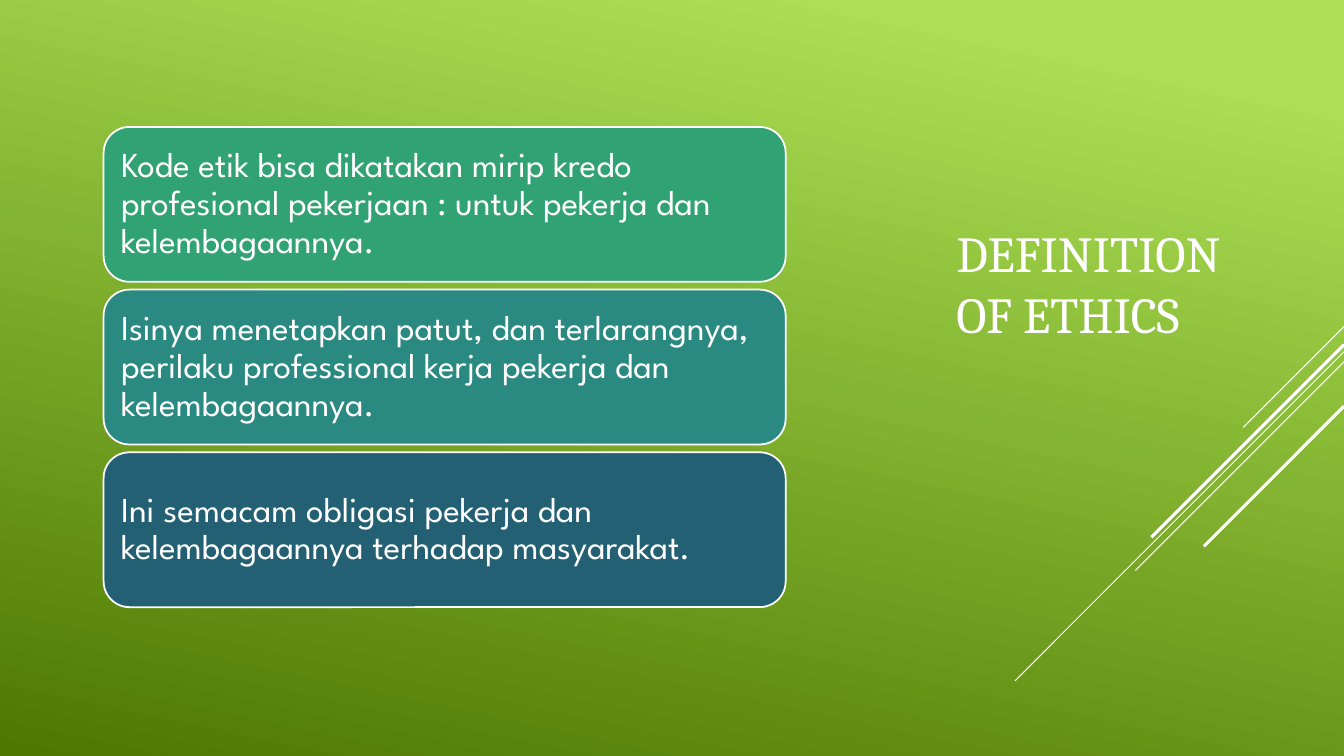
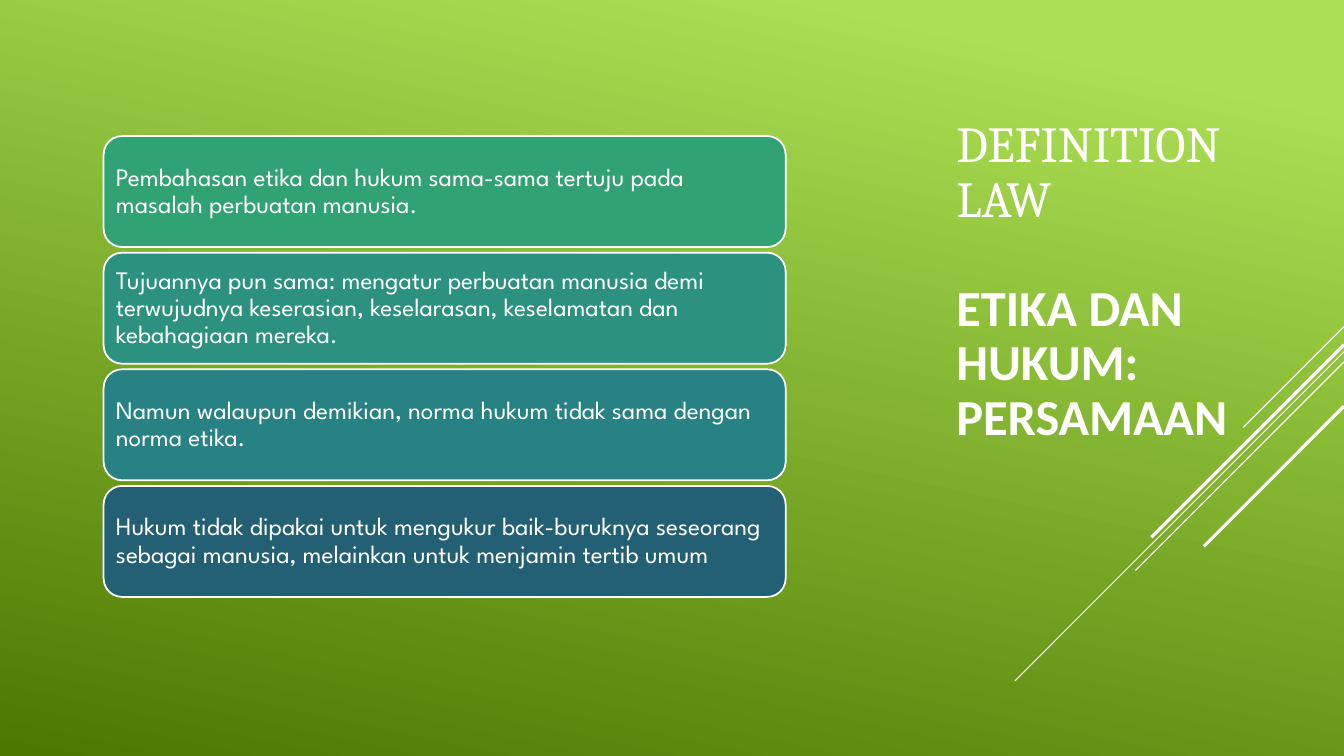
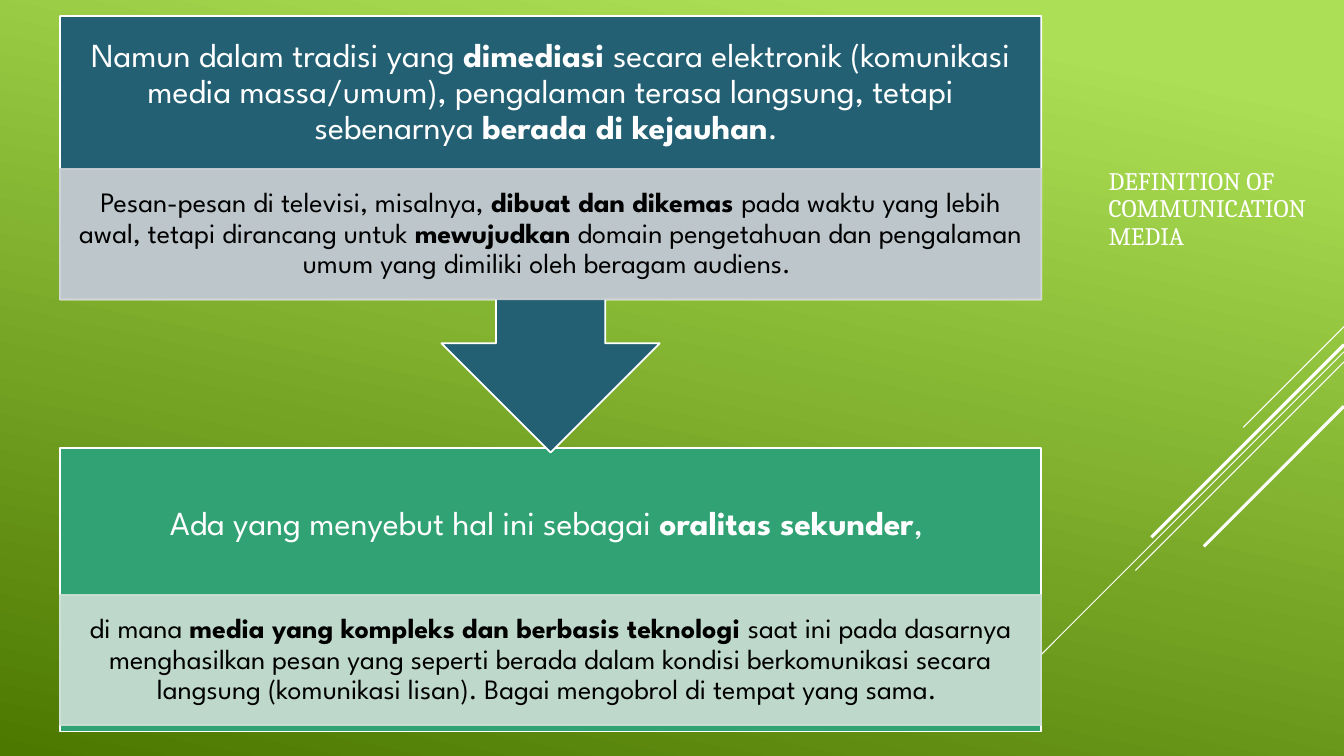
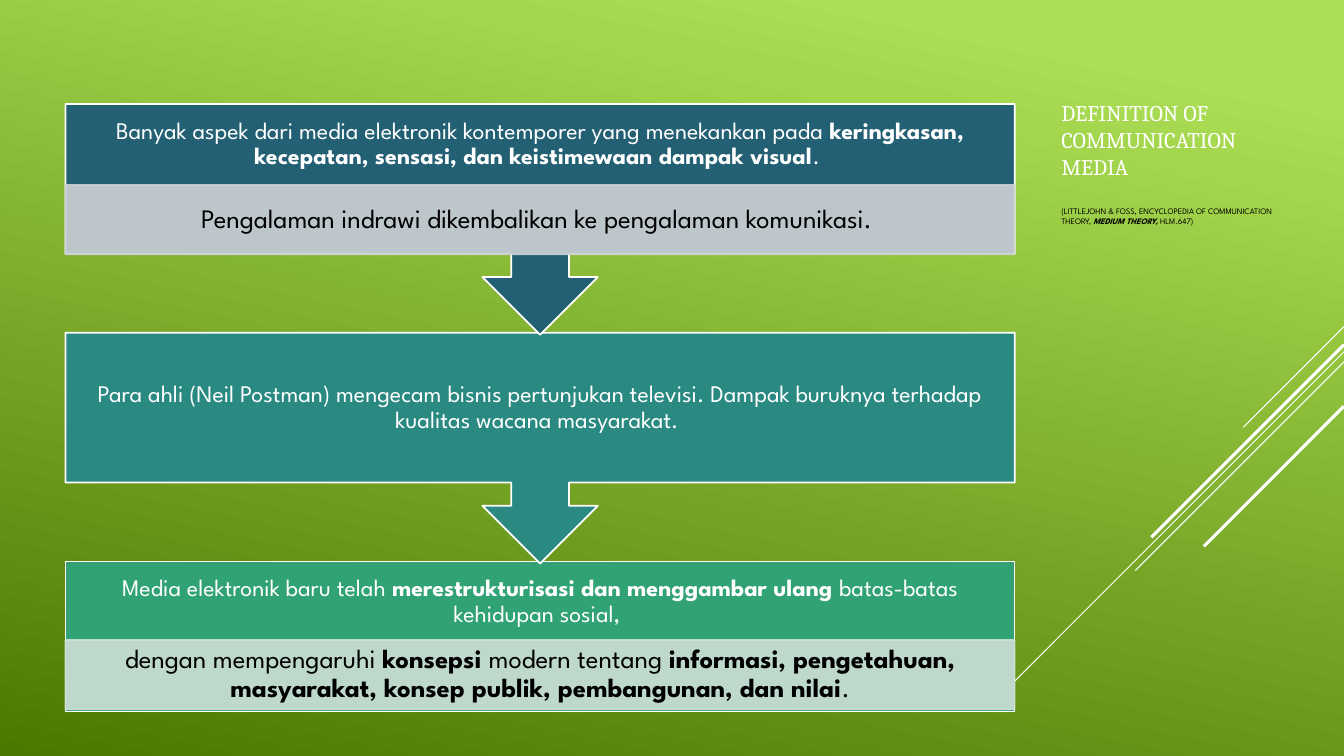
"""Build four slides on ethics, law and communication media."""
from lxml import etree
from pptx import Presentation
from pptx.dml.color import RGBColor
from pptx.enum.shapes import MSO_CONNECTOR, MSO_SHAPE
from pptx.enum.text import MSO_ANCHOR, PP_ALIGN
from pptx.oxml.ns import qn
from pptx.util import Pt

STRAIGHT = MSO_CONNECTOR.STRAIGHT
ROUNDED = MSO_SHAPE.ROUNDED_RECTANGLE
RECTANGLE = MSO_SHAPE.RECTANGLE
CALLOUT = MSO_SHAPE.DOWN_ARROW_CALLOUT
MIDDLE = MSO_ANCHOR.MIDDLE
LEFT, CENTER = PP_ALIGN.LEFT, PP_ALIGN.CENTER

COLORS = {
    "lime": "ACDF55", "forest": "4C7800", "white": "FFFFFF", "black": "000000",
    "green": "31A274", "sea": "2C927F", "teal": "2A8A82", "lagoon": "288183",
    "navy": "236073", "pale green": "CEE0D6", "pale grey": "CDD2D5",
}
SERIF, SANS, BODY = "Cambria", "Calibri", "League Spartan"
SLIDE_WIDTH, SLIDE_HEIGHT = 960, 540
CALLOUT_BOX_SHARE = 0.65

RAYS = [(233.3, 72, 0.75), (251.3, 235, 0.75), (258.5, 149, 0.75),
        (246.2, 137.6, 2.25), (290.2, 100.1, 2.25)]

SLIDES = [
    {
        "title": {"box": (676, 74.2, 239.8, 255.6), "spacing": 1.0, "paras": [
            ("DEFINITION OF ETHICS", SERIF, 36, "white", {})]},
        "cards": {"top": 90.7, "height": 110.6, "gap": 5.6, "size": 25, "margin": 7.2, "items": [
            ("green", "Kode etik bisa dikatakan mirip kredo profesional pekerjaan : untuk pekerja dan kelembagaannya."),
            ("teal", "Isinya menetapkan patut, dan terlarangnya, perilaku professional kerja pekerja dan kelembagaannya."),
            ("navy", "Ini semacam obligasi pekerja dan kelembagaannya terhadap masyarakat."),
        ]},
    },
    {
        "title": {"box": (676, 74.2, 239.8, 255.6), "spacing": 0.9, "paras": [
            ("DEFINITION LAW", SERIF, 36, "white", {}),
            ("*ETIKA DAN HUKUM: PERSAMAAN", SANS, 36, "white", {"space_before": Pt(39)})]},
        "cards": {"top": 97.2, "height": 79.3, "gap": 4, "size": 18, "margin": 5, "items": [
            ("green", "Pembahasan etika dan hukum sama-sama tertuju pada masalah perbuatan manusia."),
            ("sea", "Tujuannya pun sama: mengatur perbuatan manusia demi terwujudnya keserasian, keselarasan, "
                    "keselamatan dan kebahagiaan mereka."),
            ("lagoon", "Namun walaupun demikian, norma hukum tidak sama dengan norma etika."),
            ("navy", "Hukum tidak dipakai untuk mengukur baik-buruknya seseorang sebagai manusia, "
                     "melainkan untuk menjamin tertib umum"),
        ]},
    },
    {
        "title": {"box": (784.8, 60.5, 171.4, 178.6), "spacing": 0.9, "paras": [
            ("DEFINITION OF COMMUNICATION MEDIA", SERIF, 18, "white", {})]},
        "flow": {"left": 42.9, "width": 700.8, "top": 11.4, "pitch": 308.4, "callout": 311.8,
                 "size": 24, "margin": 13.7, "band_size": 20, "band_margin": 11.4, "band_height": 93,
                 "steps": [
            {"kind": CALLOUT, "fill": "navy", "header": 109.4, "band_offset": 109.3, "band_fill": "pale grey",
             "text": "Namun dalam tradisi yang *dimediasi *secara elektronik (komunikasi media massa/umum), "
                     "pengalaman terasa langsung, tetapi sebenarnya *berada di kejauhan*. ",
             "band": "Pesan-pesan di televisi, misalnya, *dibuat dan dikemas *pada waktu yang lebih awal, "
                     "tetapi dirancang untuk *mewujudkan* domain pengetahuan dan pengalaman umum "
                     "yang dimiliki oleh beragam audiens. "},
            {"kind": RECTANGLE, "fill": "green", "header": 109.4, "band_offset": 105.1, "band_fill": "pale green",
             "text": "Ada yang menyebut hal ini sebagai *oralitas sekunder*, ",
             "band": "di mana *media yang kompleks dan berbasis teknologi *saat ini pada dasarnya menghasilkan "
                     "pesan yang seperti berada dalam kondisi berkomunikasi secara langsung (komunikasi lisan). "
                     "Bagai mengobrol di tempat yang sama. "},
        ]},
    },
    {
        "title": {"box": (751, 23, 175, 186.5), "spacing": 1.0, "paras": [
            ("DEFINITION OF COMMUNICATION MEDIA", SERIF, 16, "white", {}),
            ("(LITTLEJOHN & FOSS, ENCYCLOPEDIA OF COMMUNICATION THEORY, *MEDIUM THEORY, *HLM.647)",
             BODY, 6, "black", {"space_before": Pt(19)})]},
        "flow": {"left": 46.8, "width": 678, "top": 74.2, "pitch": 163.4, "callout": 164.9,
                 "size": 17, "margin": 9.4, "band_size": 19, "band_margin": 10.6, "band_height": 49.5,
                 "steps": [
            {"kind": CALLOUT, "fill": "navy", "header": 57.6, "band_offset": 58, "band_fill": "pale grey",
             "text": "Banyak aspek dari media elektronik kontemporer yang menekankan pada "
                     "*keringkasan, kecepatan, sensasi, dan keistimewaan dampak visual*. ",
             "band": "Pengalaman indrawi dikembalikan ke pengalaman komunikasi. "},
            {"kind": CALLOUT, "fill": "teal", "header": 107.2,
             "text": "Para ahli (Neil Postman) mengecam bisnis pertunjukan televisi. "
                     "Dampak buruknya terhadap kualitas wacana masyarakat. "},
            {"kind": RECTANGLE, "fill": "green", "header": 57.6, "band_offset": 56.2, "band_fill": "pale green",
             "text": "Media elektronik baru telah *merestrukturisasi dan menggambar ulang *batas-batas kehidupan sosial, ",
             "band": "dengan mempengaruhi *konsepsi *modern tentang *informasi, pengetahuan, masyarakat, "
                     "konsep publik, pembangunan, dan nilai*."},
        ]},
    },
]


def write_text(box, paras, margins, align, spacing):
    frame = box.text_frame
    sides = ("margin_left", "margin_top", "margin_right", "margin_bottom")
    settings = dict(zip(sides, map(Pt, margins)), word_wrap=True, vertical_anchor=MIDDLE)
    for name, value in settings.items():
        setattr(frame, name, value)
    for number, (text, font, size, color, extra) in enumerate(paras):
        para = frame.add_paragraph() if number else frame.paragraphs[0]
        for name, value in {"alignment": align, "line_spacing": spacing, **extra}.items():
            setattr(para, name, value)
        for index, part in enumerate(text.split("*")):
            if not part:
                continue
            span = para.add_run()
            span.text = part
            strong = index % 2 == 1
            formats = {"name": font, "size": Pt(size), "bold": strong, "italic": strong and color == "black" and size < 10}
            for name, value in formats.items():
                setattr(span.font, name, value)
            span.font.color.rgb = RGBColor.from_string(COLORS[color])


def add_panel(page, kind, box, fill, line, alpha=100):
    panel = page.shapes.add_shape(kind, *map(Pt, box))
    panel.shadow.inherit = False
    panel.fill.solid()
    panel.fill.fore_color.rgb = RGBColor.from_string(COLORS[fill])
    panel.line.color.rgb = RGBColor.from_string(COLORS[line])
    panel.line.width = Pt(1.25)
    if alpha < 100:
        for color in list(panel.element.spPr.iter(qn("a:srgbClr"))):
            etree.SubElement(color, qn("a:alpha")).set("val", str(alpha * 1000))
    return panel


deck = Presentation()
deck.slide_width, deck.slide_height = Pt(SLIDE_WIDTH), Pt(SLIDE_HEIGHT)
backdrop = deck.slide_master.background.fill
backdrop.gradient()
backdrop.gradient_angle = 258
for stop, (position, color) in zip(backdrop.gradient_stops, [(0.1, "lime"), (1, "forest")]):
    stop.position = position
    stop.color.rgb = RGBColor.from_string(COLORS[color])

for content in SLIDES:
    page = deck.slides.add_slide(deck.slide_layouts[6])
    title = content["title"]
    title_box = page.shapes.add_textbox(*map(Pt, title["box"]))
    write_text(title_box, title["paras"], (7.2, 3.6, 7.2, 3.6), LEFT, title["spacing"])

    for top, reach, width in RAYS:
        ray = page.shapes.add_connector(
            STRAIGHT, Pt(SLIDE_WIDTH), Pt(top), Pt(SLIDE_WIDTH - reach), Pt(top + reach))
        ray.line.color.rgb = RGBColor.from_string(COLORS["white"])
        ray.line.width = Pt(width)
        etree.SubElement(ray.element.spPr, qn("a:effectLst"))

    if "cards" in content:
        cards = content["cards"]
        for row, (fill, text) in enumerate(cards["items"]):
            top = cards["top"] + row * (cards["height"] + cards["gap"])
            card = add_panel(page, ROUNDED, (74, top, 487.2, cards["height"]), fill, "white")
            write_text(card, [(text, BODY, cards["size"], "white", {})], [cards["margin"]] * 4, LEFT, 0.9)

    if "flow" in content:
        flow = content["flow"]
        left, width, margin = flow["left"], flow["width"], flow["margin"]
        box_height = flow["callout"] * CALLOUT_BOX_SHARE
        for row, step in reversed(list(enumerate(flow["steps"]))):
            top = flow["top"] + row * flow["pitch"]
            height = flow["callout"] if step["kind"] == CALLOUT else box_height
            panel = add_panel(page, step["kind"], (left, top, width, height), step["fill"], "white")
            below = box_height - step["header"] + margin
            write_text(panel, [(step["text"], BODY, flow["size"], "white", {})],
                       (margin, margin, margin, below), CENTER, 0.9)
            if "band" in step:
                band_box = (left, top + step["band_offset"], width, flow["band_height"])
                band = add_panel(page, RECTANGLE, band_box, step["band_fill"], step["band_fill"], 90)
                side = flow["band_margin"]
                write_text(band, [(step["band"], BODY, flow["band_size"], "black", {})],
                           (side, 2, side, 2), CENTER, 0.9)

deck.save("out.pptx")
